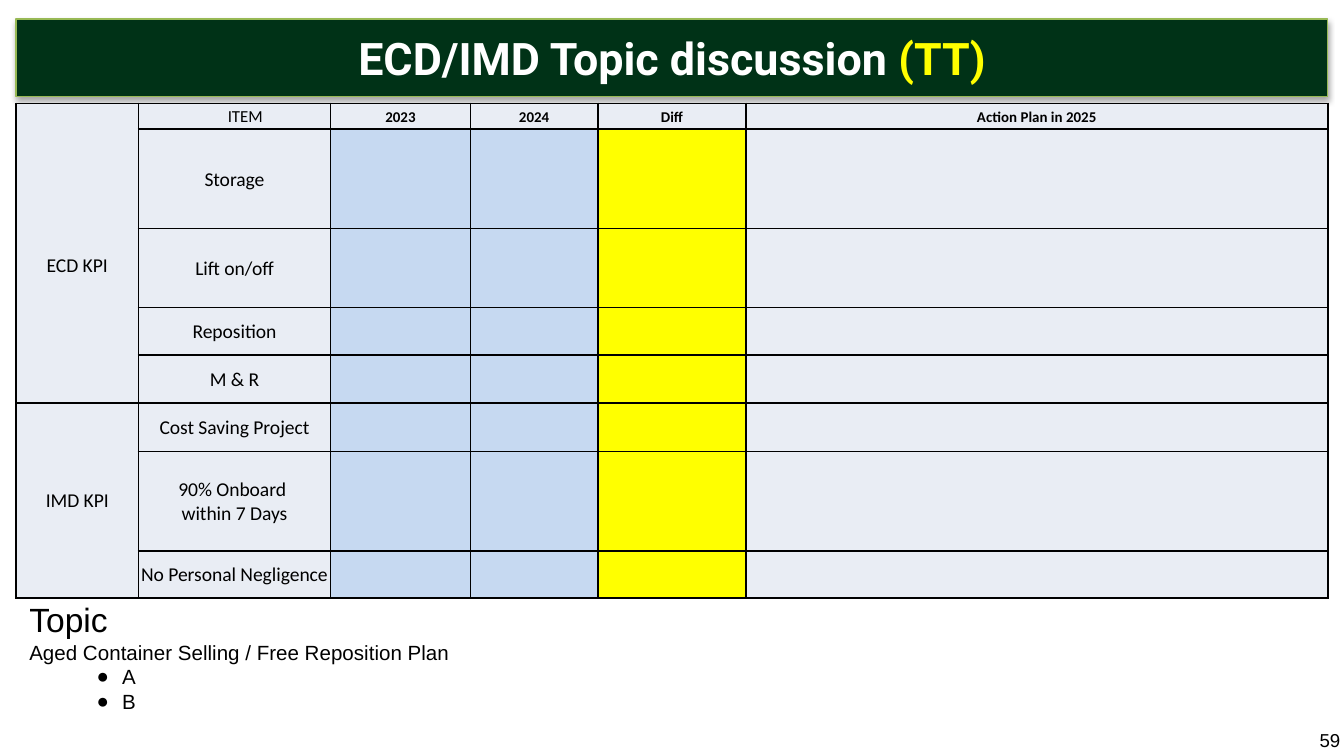
from lxml.etree import SubElement
from pptx import Presentation
from pptx.dml.color import RGBColor
from pptx.enum.text import MSO_ANCHOR, MSO_AUTO_SIZE, PP_ALIGN
from pptx.oxml import parse_xml
from pptx.oxml.ns import nsdecls, qn
from pptx.util import Inches, Pt

BLACK = RGBColor(0, 0, 0)
WHITE = RGBColor(0xFF, 0xFF, 0xFF)
YELLOW = RGBColor(0xFF, 0xFF, 0)
DARK_GREEN = RGBColor(0, 0x32, 0x17)
LIGHT_GREEN = RGBColor(0x98, 0xB9, 0x55)
PALE_GREY = RGBColor(0xE9, 0xED, 0xF4)
PALE_BLUE = RGBColor(0xC6, 0xD9, 0xF1)

SLIDE_WIDTH = Inches(10)
SLIDE_HEIGHT = SLIDE_WIDTH * 9 // 16
MARGIN, CONTENT_WIDTH = 0.12, 9.76
COLUMN_WIDTHS = [0.91, 1.43, 1.04, 0.95, 1.1, 4.33]
COLUMN_FILLS = [PALE_GREY, PALE_GREY, PALE_BLUE, PALE_BLUE, YELLOW, PALE_GREY]
HEADERS = ["ITEM", "2023", "2024", "Diff", "Action Plan in 2025"]
ITEMS = [
    ("Storage", 0.74), ("Lift on/off", 0.59), ("Reposition", 0.35), ("M & R", 0.36),
    ("Cost Saving Project", 0.36), ("90% Onboard \nwithin 7 Days", 0.74),
    ("No Personal Negligence", 0.35),
]
HEADER_HEIGHT = 0.19
GROUPS = [("ECD KPI", 0, 4), ("IMD KPI", 5, 7)]  # label, first row, last row


def format_runs(paragraph, font_name, size, color=BLACK, bold=False):
    for run in paragraph.runs:
        run.font.name = font_name
        run.font.size = Pt(size)
        run.font.bold = bold
        run.font.color.rgb = color


def add_title(slide, left, top, width, height):
    title = slide.shapes.title
    title.left, title.top, title.width, title.height = map(Inches, (left, top, width, height))
    title.fill.solid()
    title.fill.fore_color.rgb = DARK_GREEN
    title.line.color.rgb = LIGHT_GREEN
    title.line.width = Pt(0.75)
    title._element.spPr.append(parse_xml(
        f'<a:effectLst {nsdecls("a")}><a:outerShdw blurRad="39370" dist="22860" dir="5400000" '
        'rotWithShape="0"><a:srgbClr val="000000"><a:alpha val="35000"/></a:srgbClr>'
        '</a:outerShdw></a:effectLst>'))
    frame = title.text_frame
    frame.auto_size = MSO_AUTO_SIZE.NONE
    frame.vertical_anchor = MSO_ANCHOR.MIDDLE
    frame.margin_left = frame.margin_right = frame.margin_top = frame.margin_bottom = 0
    paragraph = frame.paragraphs[0]
    paragraph.alignment = PP_ALIGN.CENTER
    for text in ("ECD/IMD Topic discussion ", "(TT)"):
        paragraph.add_run().text = text
    format_runs(paragraph, "Roboto", 24, WHITE, bold=True)
    paragraph.runs[1].font.color.rgb = YELLOW


def style_cell(cell, fill):
    properties = cell._tc.get_or_add_tcPr()
    for side in ("L", "R", "T", "B"):
        properties.append(parse_xml(
            f'<a:ln{side} {nsdecls("a")} w="12700"><a:solidFill><a:srgbClr val="{BLACK}"/>'
            f'</a:solidFill></a:ln{side}>'))
    cell.fill.solid()
    cell.fill.fore_color.rgb = fill
    cell.margin_left = cell.margin_right = cell.margin_top = Inches(0.01)
    cell.margin_bottom = 0
    cell.vertical_anchor = MSO_ANCHOR.MIDDLE


def write_cell(cell, text, size=10.5, bold=False):
    cell.text_frame.text = text
    for paragraph in cell.text_frame.paragraphs:
        paragraph.alignment = PP_ALIGN.CENTER
        format_runs(paragraph, "Calibri", size, bold=bold)


def add_kpi_table(slide, left, top, width):
    heights = [HEADER_HEIGHT] + [height for _, height in ITEMS]
    frame = slide.shapes.add_table(len(heights), len(COLUMN_WIDTHS), Inches(left), Inches(top),
                                   Inches(width), Inches(sum(heights)))
    table = frame.table
    table.first_row = table.horz_banding = False
    for column, share in zip(table.columns, COLUMN_WIDTHS):
        column.width = Inches(width * share / sum(COLUMN_WIDTHS))
    for row_index, (row, height) in enumerate(zip(table.rows, heights)):
        row.height = Inches(height)
        for cell, fill in zip(row.cells, COLUMN_FILLS):
            style_cell(cell, fill if row_index else PALE_GREY)
    # Header row and item column
    for column_index, text in enumerate(HEADERS, 1):
        is_item = column_index == 1
        write_cell(table.cell(0, column_index), text, 9 if is_item else 8, bold=not is_item)
    table.cell(0, 1).margin_left = Inches(0.17)
    for row_index, (text, _) in enumerate(ITEMS, 1):
        write_cell(table.cell(row_index, 1), text)
    # Group labels
    for label, first, last in GROUPS:
        table.cell(first, 0).merge(table.cell(last, 0))
        write_cell(table.cell(first, 0), label)
    table.cell(0, 0).margin_top = Inches(0.18)


def add_text_box(slide, left, top, width, height, text, size):
    box = slide.shapes.add_textbox(*map(Inches, (left, top, width, height)))
    frame = box.text_frame
    frame.word_wrap = True
    frame.text = text
    for paragraph in frame.paragraphs:
        format_runs(paragraph, "Arial", size)
    return frame


def add_topic(slide, left, top, width, height):
    frame = add_text_box(slide, left, top, width, height,
                         "Topic\nAged Container Selling / Free Reposition Plan\nA\nB", 11)
    heading, _, *bullets = frame.paragraphs
    format_runs(heading, "Arial", 18)
    for paragraph in bullets:
        paragraph.level = 1
        properties = paragraph._p.get_or_add_pPr()
        properties.set("marL", str(Inches(0.69)))
        properties.set("indent", str(Inches(-0.19)))
        SubElement(properties, qn("a:buFont"), typeface="Arial")
        SubElement(properties, qn("a:buChar"), char="●")


def add_page_number(slide, left, top, width, height):
    frame = add_text_box(slide, left, top, width, height, "59", 10)
    frame.vertical_anchor = MSO_ANCHOR.MIDDLE


def main():
    presentation = Presentation()
    presentation.slide_width, presentation.slide_height = SLIDE_WIDTH, SLIDE_HEIGHT
    slide = presentation.slides.add_slide(presentation.slide_layouts[5])
    add_title(slide, MARGIN, 0.14, CONTENT_WIDTH, 0.58)
    add_kpi_table(slide, MARGIN, 0.77, CONTENT_WIDTH)
    add_page_number(slide, 9.72, 5.39, 0.64, 0.23)
    add_topic(slide, MARGIN, 4.41, CONTENT_WIDTH, 1.33)
    presentation.save("out.pptx")


if __name__ == "__main__":
    main()
